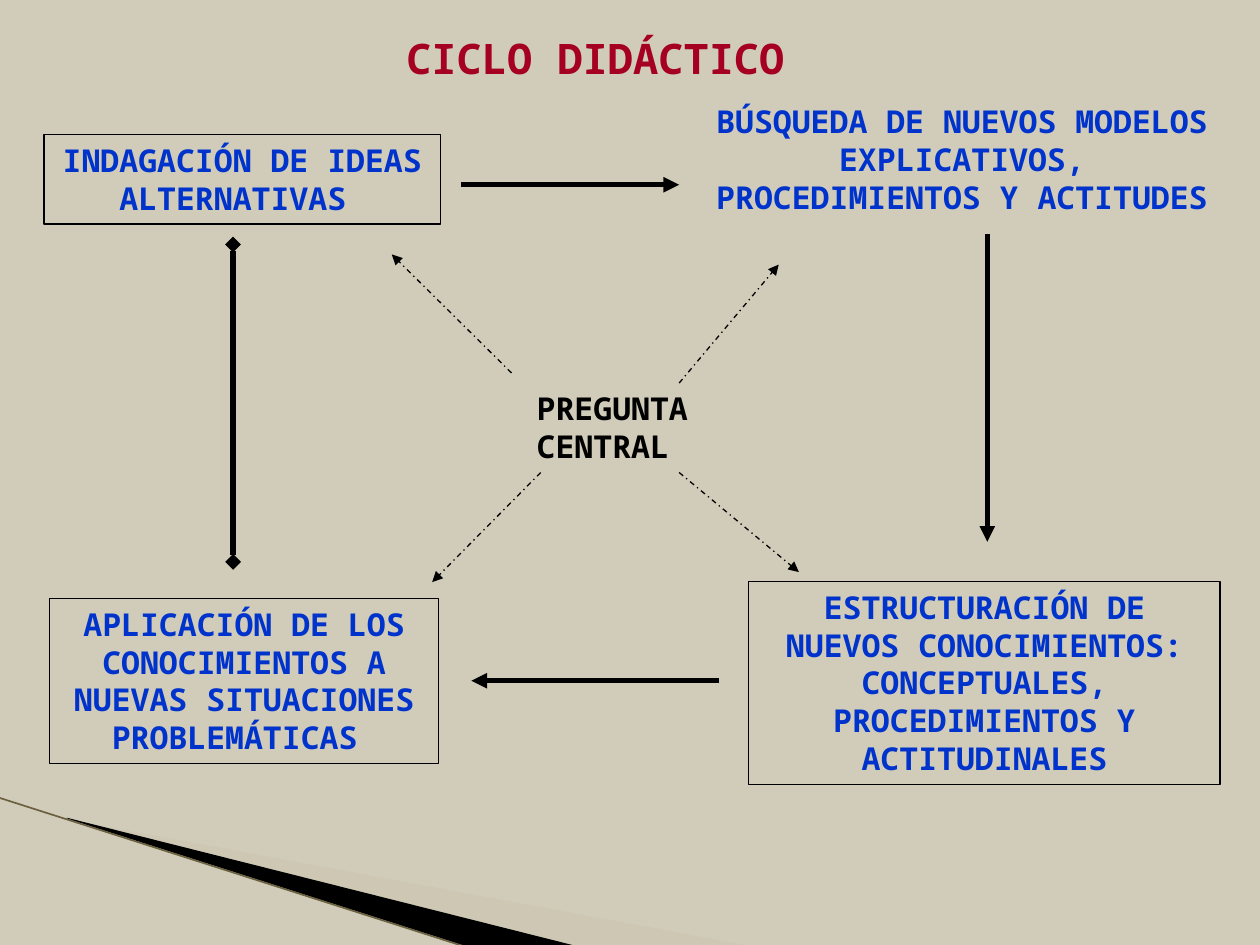
from lxml import etree
from pptx import Presentation
from pptx import util as u
from pptx.dml.color import RGBColor
from pptx.enum import dml, shapes, text
from pptx.oxml.ns import qn

SAND = RGBColor(0xD0, 0xCC, 0xB9)
TAN = RGBColor(0xC9, 0xC1, 0xAC)
BROWN = RGBColor(0x6B, 0x60, 0x40)
BLACK = RGBColor(0, 0, 0)
BLUE = RGBColor(0x00, 0x33, 0xCC)
RED = RGBColor(0xA5, 0x00, 0x21)
FONT = "Noto Sans Mono"

# outline points, fill colour, opacity in percent
WEDGES = [
    ([(39.6, 468.5), (428.4, 540.5), (328.3, 540.5), (39.6, 468)], TAN, 40),
    ([(38.2, 467.3), (329, 540.5), (267.8, 541.2), (38.9, 468)], BLACK, 100),
]
# text, (left, top, width, height), size, colour, framed, wrapped
LABELS = [
    ("CICLO DIDÁCTICO", (175.7, 15.1, 329, 36), 24, RED, False, True),
    ("PREGUNTA CENTRAL ", (263.5, 218.9, 172.8, 50.4), 18, BLACK, False, True),
    ("INDAGACIÓN DE IDEAS\nALTERNATIVAS ", (25.2, 77, 226.4, 51.1), 18, BLUE, True, False),
    ("BÚSQUEDA DE NUEVOS MODELOS EXPLICATIVOS, PROCEDIMIENTOS Y ACTITUDES",
     (399.6, 54.7, 300.2, 94.3), 18, BLUE, False, True),
    ("ESTRUCTURACIÓN DE NUEVOS CONOCIMIENTOS: CONCEPTUALES, PROCEDIMIENTOS Y ACTITUDINALES",
     (427.9, 332.4, 269.3, 115.9), 18, BLUE, True, True),
    ("APLICACIÓN DE LOS CONOCIMIENTOS A NUEVAS SITUACIONES PROBLEMÁTICAS ",
     (28.2, 342, 222.5, 94.3), 18, BLUE, True, True),
]
# start, end
CYCLE = [
    ((263.5, 105.6), (388.1, 105.6)),
    ((564.2, 133.9), (564.2, 309.6)),
    ((411.1, 389), (269.3, 389)),
]
LINK = ((133.2, 321.1), (133.2, 139.7))
RAYS = [
    ((292.3, 213.1), (223.9, 145.4)),
    ((388.1, 218.9), (445, 151.2)),
    ((309, 270), (247, 332.6)),
    ((388.1, 270), (456.5, 326.9)),
]


def wedge(tree, points, color, alpha):
    build = tree.build_freeform(*map(u.Pt, points[0]), scale=1.0)
    build.add_line_segments([tuple(map(u.Pt, p)) for p in points[1:]], close=True)
    shape = build.convert_to_shape()
    shape.shadow.inherit = False
    shape.fill.solid()
    shape.fill.fore_color.rgb = color
    shape.line.fill.background()
    if alpha < 100:
        tint = shape.fill._xPr.find(".//" + qn("a:srgbClr"))
        etree.SubElement(tint, qn("a:alpha"), val=str(alpha * 1000))


def label(tree, words, place, size, color, framed, wrapped):
    place = map(u.Pt, place)
    if framed:
        box = tree.add_shape(shapes.MSO_SHAPE.RECTANGLE, *place)
        box.shadow.inherit = False
        box.fill.background()
        box.line.color.rgb = BLACK
        box.line.width = u.Pt(0.75)
    else:
        box = tree.add_textbox(*place)
    frame = box.text_frame
    frame.text = words
    frame.word_wrap = wrapped
    frame.vertical_anchor = text.MSO_ANCHOR.TOP
    for para in frame.paragraphs:
        para.alignment = text.PP_ALIGN.CENTER
        for run in para.runs:
            run.font.name = FONT
            run.font.size = u.Pt(size)
            run.font.bold = True
            run.font.color.rgb = color


def arrow(tree, start, end, width, color=BLACK, dash=None, head=None, tail="triangle"):
    line = tree.add_connector(shapes.MSO_CONNECTOR.STRAIGHT, *map(u.Pt, start + end))
    line.line.color.rgb = color
    line.line.width = u.Pt(width)
    if dash:
        line.line.dash_style = dash
    stroke = line.line._get_or_add_ln()
    for tag, kind in (("a:headEnd", head), ("a:tailEnd", tail)):
        if kind:
            etree.SubElement(stroke, qn(tag), type=kind)
    etree.SubElement(line._element.spPr, qn("a:effectLst"))


def main():
    deck = Presentation()
    deck.slide_width, deck.slide_height = u.Pt(720), u.Pt(540)
    slide = deck.slides.add_slide(deck.slide_layouts[6])
    slide.background.fill.solid()
    slide.background.fill.fore_color.rgb = SAND
    tree = slide.shapes

    for item in WEDGES:
        wedge(tree, *item)
    arrow(tree, (-0.7, 455.8), (267.1, 541.4), 0.95, BROWN, tail=None)
    for item in LABELS:
        label(tree, *item)
    for ends in CYCLE:
        arrow(tree, *ends, 3)
    arrow(tree, *LINK, 3, head="diamond", tail="diamond")
    for ends in RAYS:
        arrow(tree, *ends, 0.75, dash=dml.MSO_LINE.DASH_DOT)
    deck.save("out.pptx")


if __name__ == "__main__":
    main()
